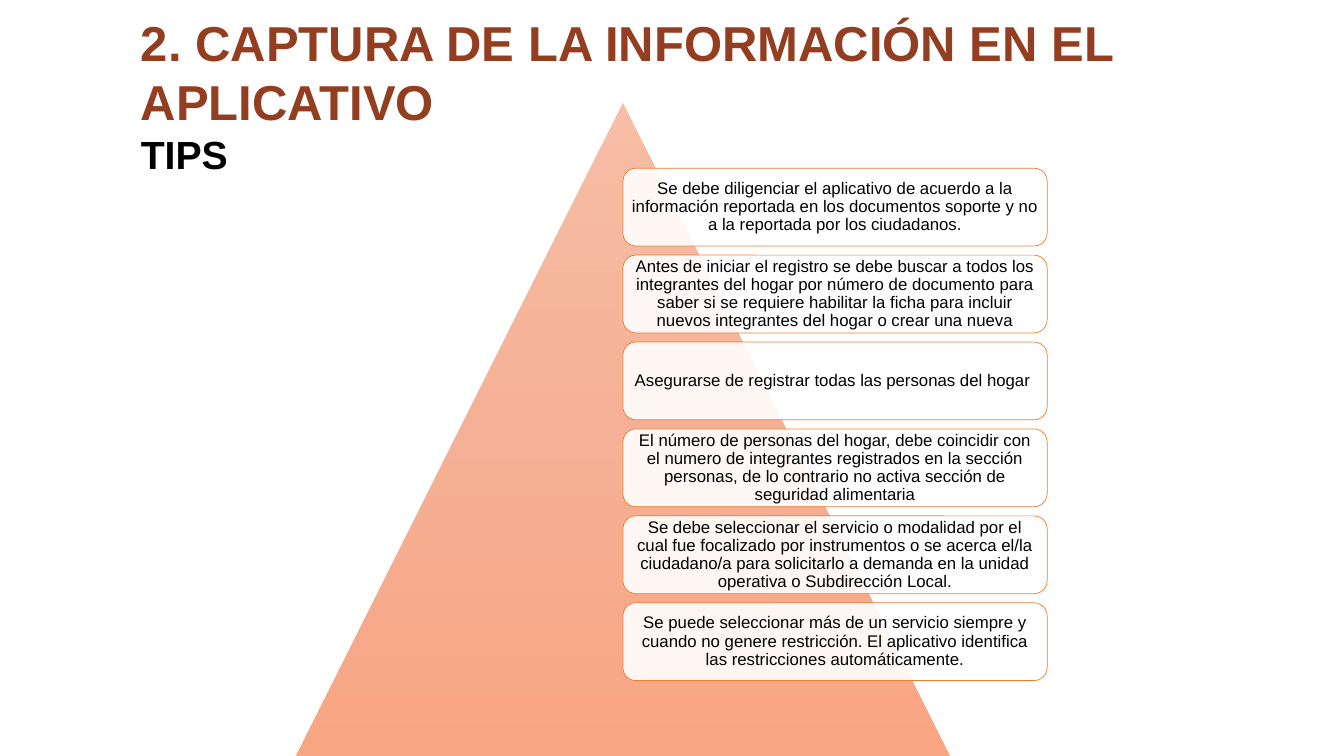
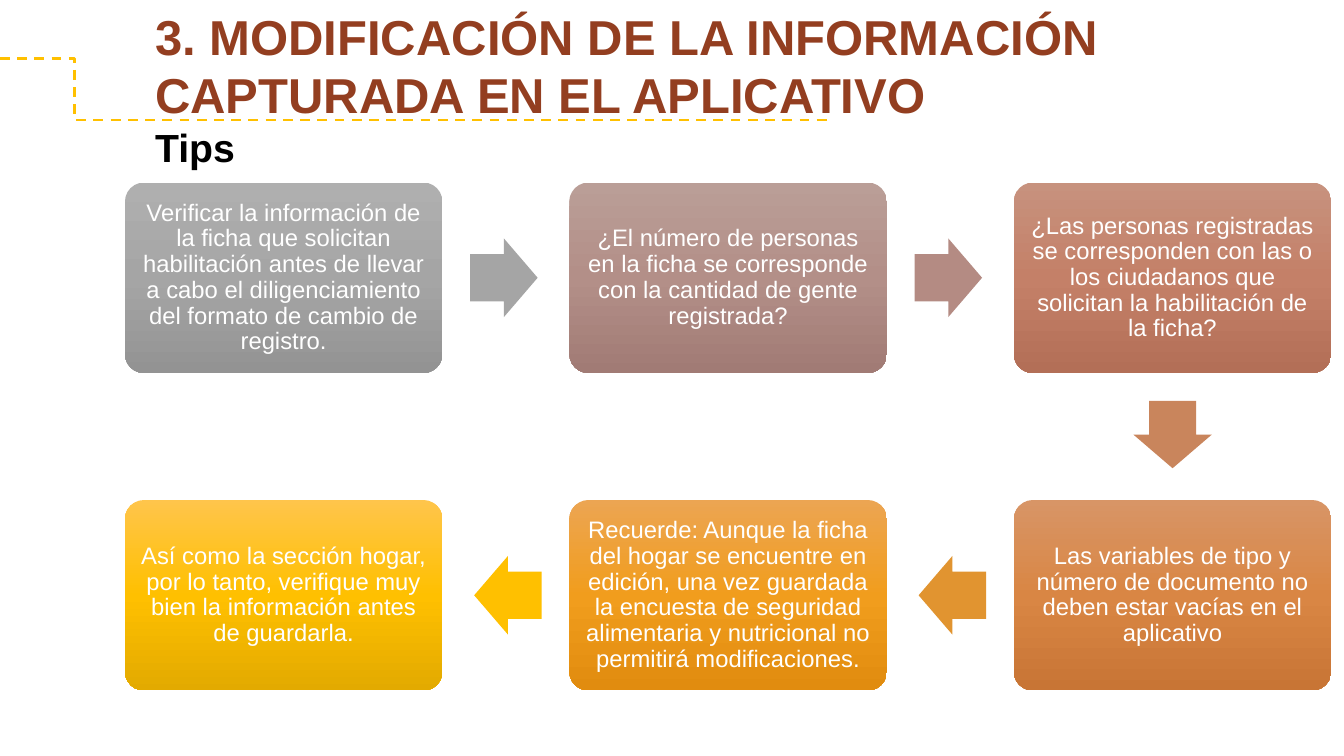
"""Build two slides of tips on capturing and modifying form records."""
from copy import deepcopy

from lxml.etree import SubElement
from pptx import Presentation
from pptx.dml.color import RGBColor
from pptx.enum.dml import MSO_LINE
from pptx.enum.shapes import MSO_CONNECTOR, MSO_SHAPE
from pptx.enum.text import MSO_ANCHOR, PP_ALIGN
from pptx.oxml.ns import qn
from pptx.util import Cm, Pt

FONT = "Arial"
BLACK, WHITE = "000000", "FFFFFF"
TITLE_COLOR, CARD_LINE, GUIDE_COLOR = "933E20", "ED7D31", "FFC000"
PYRAMID_COLORS = ("F7BDA5", "F5B196", "F8A582")

CAPTURE_TIPS = (
    "Se debe diligenciar el aplicativo de acuerdo a la información reportada en los "
    "documentos soporte y no a la reportada por los ciudadanos.",
    "Antes de iniciar el registro se debe buscar a todos los integrantes del hogar por "
    "número de documento para saber si se requiere habilitar la ficha para incluir nuevos "
    "integrantes del hogar o crear una nueva",
    "Asegurarse de registrar todas las personas del hogar ",
    "El número de personas del hogar, debe coincidir con el numero de integrantes "
    "registrados en la sección personas, de lo contrario no activa sección de seguridad "
    "alimentaria",
    "Se debe seleccionar el servicio o modalidad por el cual fue focalizado por "
    "instrumentos o se acerca el/la ciudadano/a para solicitarlo a demanda en la unidad "
    "operativa o Subdirección Local.",
    "Se puede seleccionar más de un servicio siempre y cuando no genere restricción. El "
    "aplicativo identifica las restricciones automáticamente.",
)

STEPS = (
    (0, 0, ("AFAFAF", "A5A5A5", "939393"),
     "Verificar la información de la ficha que solicitan habilitación antes de llevar a "
     "cabo el diligenciamiento del formato de cambio de registro."),
    (1, 0, ("BA9E97", "B38F88", "A17B75"),
     "¿El número de personas en la ficha se corresponde con la cantidad de gente "
     "registrada?"),
    (2, 0, ("C7927E", "C48068", "B36F57"),
     "¿Las personas registradas se corresponden con las o los ciudadanos que solicitan la "
     "habilitación de la ficha?"),
    (2, 1, ("D89566", "D98644", "C87535"),
     "Las variables de tipo y número de documento no deben estar vacías en el aplicativo"),
    (1, 1, ("ECA552", "F19D1D", "E18C0F"),
     "Recuerde: Aunque la ficha del hogar se encuentre en edición, una vez guardada la "
     "encuesta de seguridad alimentaria y nutricional no permitirá modificaciones."),
    (0, 1, ("FFC54B", "FFC000", "E3AA00"),
     "Así como la sección hogar, por lo tanto, verifique muy bien la información antes de "
     "guardarla."),
)
ARROW_COLORS = ("A5A5A5", "B48B83", "C9855C", "E19430", "FFC000")

STEP_LEFT, STEP_TOP = 3.15, 4.6
STEP_WIDTH, STEP_HEIGHT = 8, 4.8
COLUMN_PITCH, ROW_PITCH = 11.2, 8
ARROW_LENGTH, ARROW_BREADTH, ARROW_GAP = 1.7, 1.98, 0.7


def color(value):
    """Turn a hex string into a colour."""
    return RGBColor.from_string(value)


def add_run(paragraph, text, size, run_color, bold=False):
    """Add one formatted run to a paragraph."""
    run = paragraph.add_run()
    run.text = text
    run.font.name = FONT
    run.font.size = Pt(size)
    run.font.bold = bold
    run.font.color.rgb = color(run_color)


def add_plain_shape(slide, kind, left, top, width, height):
    """Add a preset shape without shadow or outline, measured in centimetres."""
    shape = slide.shapes.add_shape(kind, Cm(left), Cm(top), Cm(width), Cm(height))
    shape.shadow.inherit = False
    shape.line.fill.background()
    return shape


def fill_solid(shape, value, opacity=None):
    """Fill a shape with one colour, optionally translucent."""
    shape.fill.solid()
    shape.fill.fore_color.rgb = color(value)
    if opacity is not None:
        tone = shape._element.spPr.find(qn("a:solidFill")).find(qn("a:srgbClr"))
        SubElement(tone, qn("a:alpha"), val=str(opacity * 1000))


def fill_gradient(shape, values):
    """Fill a shape from top to bottom with three evenly spaced colours."""
    shape.fill.gradient()
    shape.fill.gradient_angle = 270
    stop_list = shape._element.spPr.find(qn("a:gradFill")).find(qn("a:gsLst"))
    stop_list.append(deepcopy(stop_list[0]))
    for index, (stop, value) in enumerate(zip(shape.fill.gradient_stops, values)):
        stop.color.rgb = color(value)
        stop.position = index / 2


def write_centered(shape, text, size, text_color, inset):
    """Write one centred paragraph inside a shape."""
    frame = shape.text_frame
    frame.word_wrap = True
    frame.vertical_anchor = MSO_ANCHOR.MIDDLE
    frame.margin_left = frame.margin_right = Cm(inset)
    frame.margin_top = frame.margin_bottom = Cm(inset)
    paragraph = frame.paragraphs[0]
    paragraph.alignment = PP_ALIGN.CENTER
    paragraph.line_spacing = 0.9
    add_run(paragraph, text, size, text_color)


def add_title(slide, title, subtitle, left, top, width, height):
    """Add the slide heading with its subtitle below."""
    box = slide.shapes.add_textbox(Cm(left), Cm(top), Cm(width), Cm(height))
    frame = box.text_frame
    frame.word_wrap = True
    add_run(frame.paragraphs[0], title, 35, TITLE_COLOR, bold=True)
    add_run(frame.add_paragraph(), subtitle, 28, BLACK, bold=True)


def add_tip_card(slide, index, text):
    """Add one translucent card to the column of tips."""
    card = add_plain_shape(slide, MSO_SHAPE.ROUNDED_RECTANGLE,
                           15.7, 4.24 + 2.19 * index, 10.69, 1.96)
    fill_solid(card, WHITE, opacity=90)
    card.line.color.rgb = color(CARD_LINE)
    card.line.width = Pt(0.5)
    write_centered(card, text, 12, BLACK, 0.12)


def step_position(column, row):
    """Return the left and top of a step in the grid."""
    return STEP_LEFT + COLUMN_PITCH * column, STEP_TOP + ROW_PITCH * row


def add_step(slide, column, row, values, text):
    """Add one step of the process."""
    left, top = step_position(column, row)
    step = add_plain_shape(slide, MSO_SHAPE.ROUNDED_RECTANGLE,
                           left, top, STEP_WIDTH, STEP_HEIGHT)
    step.adjustments[0] = 0.1
    fill_gradient(step, values)
    write_centered(step, text, 17, WHITE, 0.17)


def add_step_arrow(slide, start, end, value):
    """Add the block arrow that leads from one grid cell to the next."""
    left, top = step_position(*start)
    across, down = end[0] - start[0], end[1] - start[1]
    reach = ARROW_GAP + ARROW_LENGTH / 2
    center_x = left + STEP_WIDTH / 2 + across * (STEP_WIDTH / 2 + reach)
    center_y = top + STEP_HEIGHT / 2 + down * (STEP_HEIGHT / 2 + reach)
    arrow = add_plain_shape(slide, MSO_SHAPE.RIGHT_ARROW, center_x - ARROW_LENGTH / 2,
                            center_y - ARROW_BREADTH / 2, ARROW_LENGTH, ARROW_BREADTH)
    arrow.adjustments[0] = 0.6
    arrow.adjustments[1] = 0.5
    arrow.rotation = 90 if down else 90 - 90 * across
    fill_solid(arrow, value)


def add_guide_line(slide):
    """Add the dashed bent line beneath the heading."""
    line = slide.shapes.add_connector(MSO_CONNECTOR.ELBOW,
                                      Cm(0), Cm(1.47), Cm(20.85), Cm(3.02))
    line.line.color.rgb = color(GUIDE_COLOR)
    line.line.width = Pt(1.75)
    line.line.dash_style = MSO_LINE.DASH
    properties = line._element.spPr
    adjustments = properties.find(qn("a:prstGeom")).find(qn("a:avLst"))
    SubElement(adjustments, qn("a:gd"), name="adj1", fmla="val 9000")
    SubElement(properties, qn("a:effectLst"))


def build_capture_slide(slide):
    """Build the pyramid list of capture tips."""
    add_title(slide, "2. CAPTURA DE LA INFORMACIÓN EN EL APLICATIVO", "TIPS",
              3.3, 0.2, 28.93, 5.64)
    pyramid = add_plain_shape(slide, MSO_SHAPE.ISOSCELES_TRIANGLE, 7.47, 2.59, 16.46, 16.46)
    fill_gradient(pyramid, PYRAMID_COLORS)
    for index, text in enumerate(CAPTURE_TIPS):
        add_tip_card(slide, index, text)


def build_modification_slide(slide):
    """Build the winding process of modification tips."""
    for step in STEPS:
        add_step(slide, *step)
    for start, end, value in zip(STEPS, STEPS[1:], ARROW_COLORS):
        add_step_arrow(slide, start[:2], end[:2], value)
    add_title(slide, "3. MODIFICACIÓN DE LA INFORMACIÓN CAPTURADA EN EL APLICATIVO", "Tips",
              3.66, 0.03, 29.95, 4.45)
    add_guide_line(slide)


def main():
    """Create and save the presentation."""
    presentation = Presentation()
    presentation.slide_width = Cm(33.87)
    presentation.slide_height = Cm(19.05)
    for build in (build_capture_slide, build_modification_slide):
        build(presentation.slides.add_slide(presentation.slide_layouts[6]))
    presentation.save("out.pptx")


if __name__ == "__main__":
    main()
